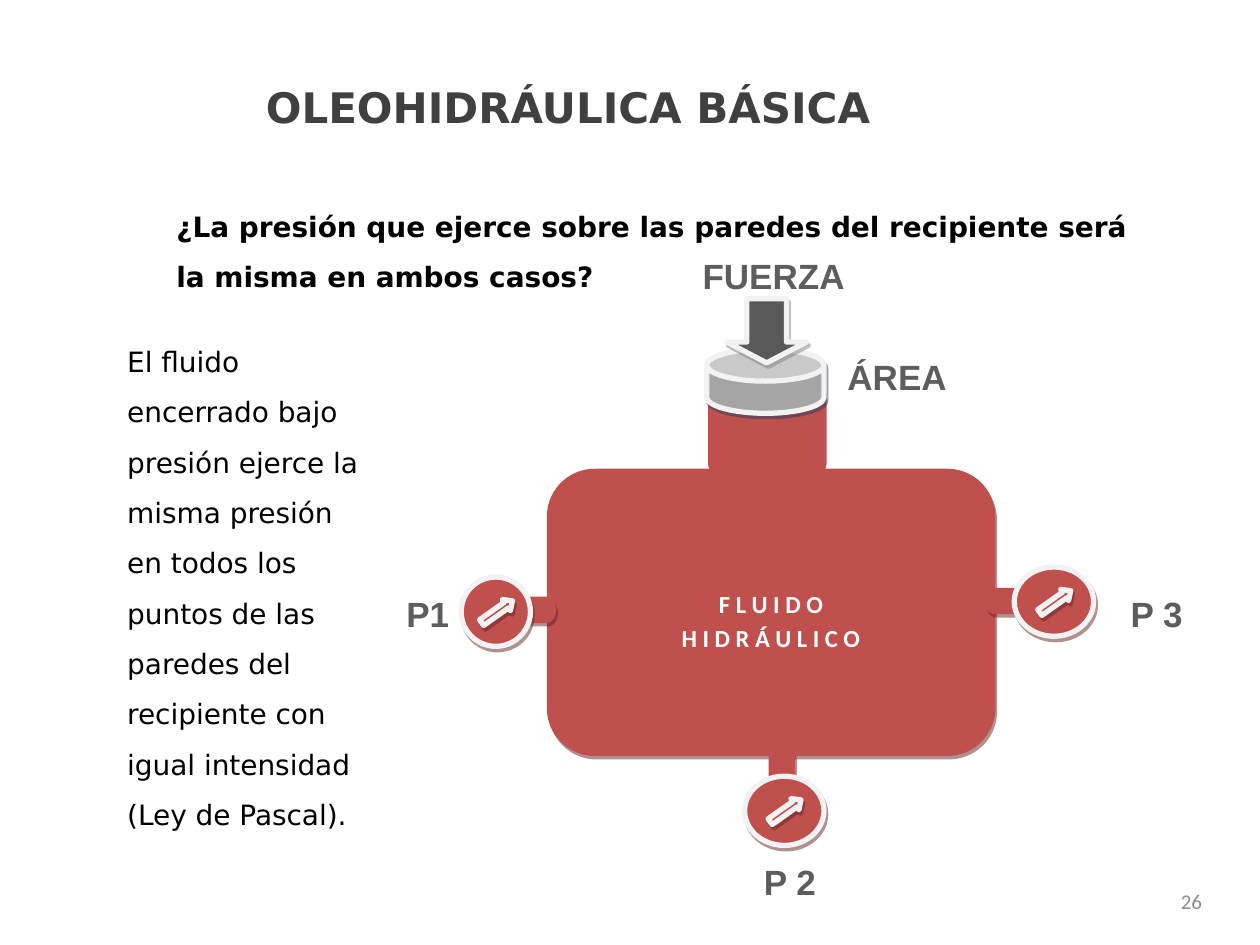
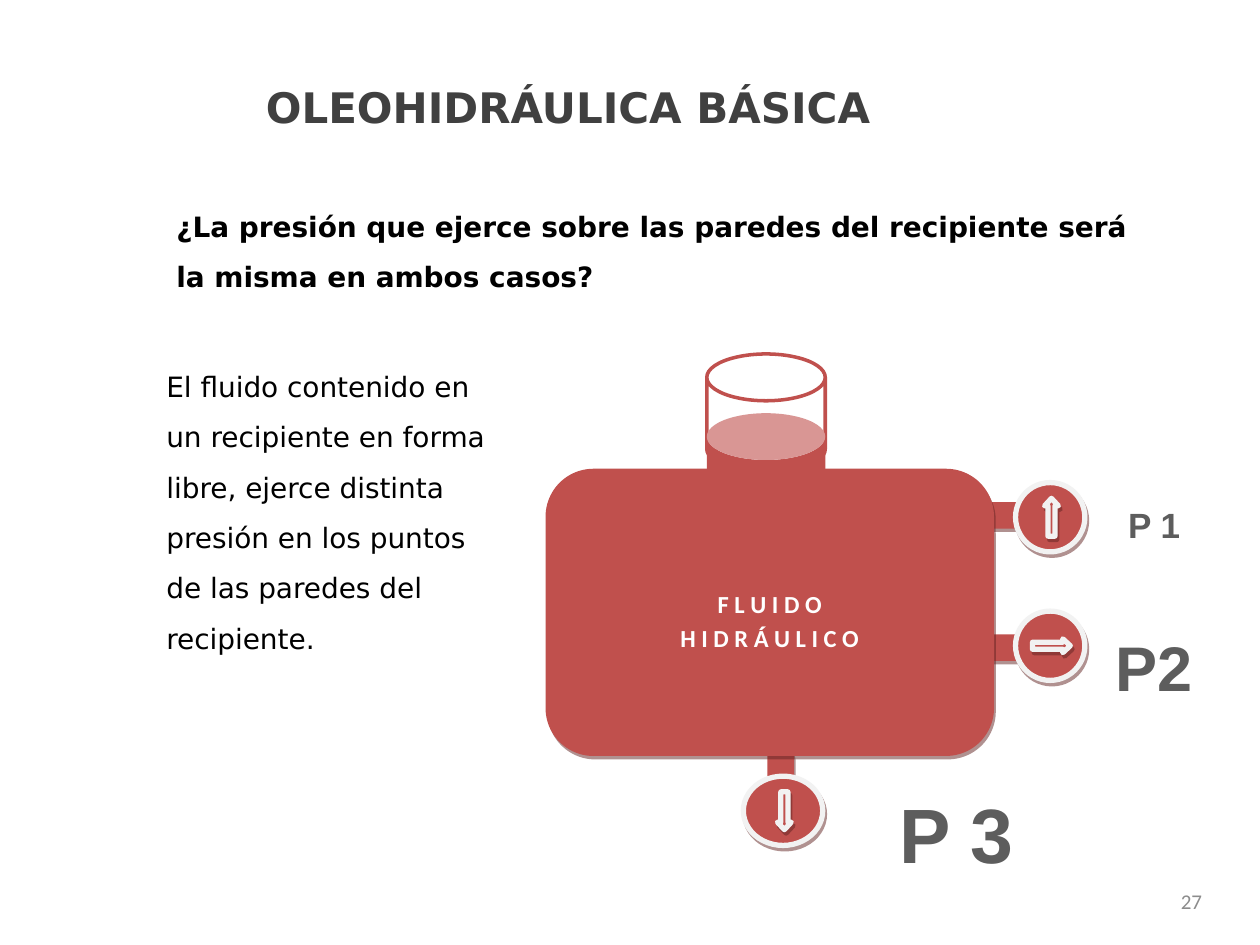
import pptx
import pptx.util
from lxml import etree
from pptx.dml.color import RGBColor
from pptx.enum.shapes import MSO_SHAPE
from pptx.enum.text import MSO_ANCHOR, MSO_AUTO_SIZE, PP_ALIGN
from pptx.oxml.ns import qn

RED = RGBColor(0xC0, 0x50, 0x4D)
DARK_RED = RGBColor(0x62, 0x24, 0x23)
WHITE = RGBColor(0xFF, 0xFF, 0xFF)
RIM = RGBColor(0xF2, 0xF2, 0xF2)
STEEL = RGBColor(0xA5, 0xA5, 0xA5)
STEEL_SHADE = RGBColor(0x24, 0x3F, 0x60)
ARROW_GREY = RGBColor(0x59, 0x59, 0x59)
ARROW_SHADE = RGBColor(0x7F, 0x7F, 0x7F)
LABEL_GREY = RGBColor(0x5D, 0x5D, 0x5D)
TITLE_GREY = RGBColor(0x40, 0x40, 0x40)
NUMBER_GREY = RGBColor(0x8C, 0x8C, 0x8C)
BLACK = RGBColor(0, 0, 0)

# The slide is a grid of 100 columns by 75 rows
WIDTH, HEIGHT = pptx.util.Inches(10), pptx.util.Inches(7.5)
COL, ROW = WIDTH / 100, HEIGHT / 75

TITLE_BOX = (20.1, 6, 60.6, 5)
QUESTION_BOX = (13, 14.8, 78.7, 8.5)
NUMBER_BOX = (73.1, 69.5, 23.3, 4)
TANK_SIZE = (35.6, 22.8)

TITLE = "OLEOHIDRÁULICA BÁSICA"
QUESTION = ("¿La presión que ejerce sobre las paredes del recipiente será "
            "la misma en ambos casos?")
CLOSED_TEXT = ("El fluido encerrado bajo presión ejerce la misma presión en todos los "
               "puntos de las paredes del recipiente con igual intensidad (Ley de Pascal).")
OPEN_TEXT = ("El fluido contenido en un recipiente en forma libre, ejerce distinta "
             "presión en los puntos de las paredes del recipiente.")


def emu(box):
    x, y, w, h = box
    return [pptx.util.Emu(round(v)) for v in (x * COL, y * ROW, w * COL, h * ROW)]


def centred(origin, cx, cy, w, h):
    """Box of the given size whose centre is offset from origin."""
    return origin[0] + cx - w / 2, origin[1] + cy - h / 2, w, h


def write(sp, text, size, font="DejaVu Sans", color=BLACK, bold=False,
          align=PP_ALIGN.LEFT, anchor=MSO_ANCHOR.TOP, spacing=None, wrap=True):
    tf = sp.text_frame
    tf.auto_size = MSO_AUTO_SIZE.NONE
    tf.word_wrap = wrap
    tf.vertical_anchor = anchor
    for i, line in enumerate(text.split("\n")):
        p = tf.paragraphs[0] if i == 0 else tf.add_paragraph()
        p.alignment = align
        p.space_before = pptx.util.Pt(0)
        if spacing:
            p.line_spacing = spacing
        r = p.add_run()
        r.text = line
        r.font.size = pptx.util.Pt(size)
        r.font.name = font
        r.font.bold = bold
        r.font.color.rgb = color


def fill_placeholder(sp, box, text, size, **fmt):
    sp.left, sp.top, sp.width, sp.height = emu(box)
    write(sp, text, size, **fmt)
    pPr = sp.text_frame.paragraphs[0]._p.get_or_add_pPr()
    pPr.set("marL", "0")
    pPr.set("indent", "0")
    etree.SubElement(pPr, qn("a:buNone"))


def add_text(s, box, text, size, **fmt):
    write(s.shapes.add_textbox(*emu(box)), text, size, **fmt)


def add_part(s, kind, box, fill=RED, line=None, weight=3, shade=None, adj=(), angle=0):
    sp = s.shapes.add_shape(kind, *emu(box))
    sp.shadow.inherit = False
    for i, value in enumerate(adj):
        sp.adjustments[i] = value
    sp.rotation = angle
    sp.fill.solid()
    sp.fill.fore_color.rgb = fill
    if line is None:
        sp.line.fill.background()
    else:
        sp.line.color.rgb = line
        sp.line.width = pptx.util.Pt(weight)
    if shade is not None:
        effects = sp._element.spPr.find(qn("a:effectLst"))
        outer = etree.SubElement(effects, qn("a:outerShdw"), blurRad="0", dist="28000",
                                 dir="3780000", algn="ctr", rotWithShape="0")
        clr = etree.SubElement(outer, qn("a:srgbClr"), val=str(shade))
        etree.SubElement(clr, qn("a:alpha"), val="50000")
    return sp


def add_label(s, origin, cx, cy, text, size=20):
    add_text(s, centred(origin, cx, cy, 13.4, size * 0.22), text, size, font="Arial",
             color=LABEL_GREY, bold=True, align=PP_ALIGN.CENTER,
             anchor=MSO_ANCHOR.MIDDLE, wrap=False)


def add_pipe(s, origin, cx, cy, angle, length=7):
    add_part(s, MSO_SHAPE.CAN, centred(origin, cx, cy, 2.1, length),
             shade=DARK_RED, adj=[0.775], angle=angle)


def add_gauge(s, origin, cx, cy, angle, width=5.5):
    add_part(s, MSO_SHAPE.OVAL, centred(origin, cx, cy, width, 5.5),
             line=RIM, shade=DARK_RED)
    add_part(s, MSO_SHAPE.RIGHT_ARROW, centred(origin, cx + 0.1, cy, 3, 1.1),
             line=RIM, shade=DARK_RED, adj=[0.51, 0.54], angle=angle)


def add_tank(s, origin):
    sp = add_part(s, MSO_SHAPE.ROUNDED_RECTANGLE, (*origin, *TANK_SIZE),
                  shade=DARK_RED, adj=[0.167])
    sp.text_frame.margin_top = pptx.util.Inches(0.15)
    write(sp, "F L U I D O\nH I D R Á U L I C O", 14, font="Calibri", color=WHITE,
          bold=True, align=PP_ALIGN.CENTER, anchor=MSO_ANCHOR.MIDDLE,
          spacing=pptx.util.Pt(19))


def add_neck(s, origin, top, fill=RED, line=None):
    x, y = origin
    add_part(s, MSO_SHAPE.CAN, (x + 12.8, y + top, 9.4, 9.4), fill=fill, line=line,
             weight=2, adj=[0.395])


def draw_closed_tank(s, origin):
    x, y = origin
    # Neck, piston and force
    add_neck(s, origin, -7.9)
    add_part(s, MSO_SHAPE.CAN, (x + 12.7, y - 9.5, 9.3, 5.1), fill=STEEL, line=RIM,
             shade=STEEL_SHADE, adj=[0.5])
    add_part(s, MSO_SHAPE.DOWN_ARROW, (x + 14.3, y - 13.5, 6.3, 5.1), fill=ARROW_GREY,
             line=RIM, shade=ARROW_SHADE, adj=[0.5, 0.323])
    add_tank(s, origin)
    # Pipes and gauges
    add_pipe(s, origin, 18.65, 24.35, 180, length=4.7)
    add_pipe(s, origin, -2.75, 11.2, 270)
    add_pipe(s, origin, 38.25, 10.5, 90)
    for cx, cy, width in ((18.85, 27.15, 6.3), (-4.05, 11.35, 5.5), (40.25, 10.55, 6.3)):
        add_gauge(s, origin, cx, cy, 324.7, width)
    for cx, cy, text in ((18, -15.3, "FUERZA"), (27.8, -7.3, "ÁREA"), (-9.45, 11.5, "P1"),
                         (19.3, 32.8, "P 2"), (48.4, 11.5, "P 3")):
        add_label(s, origin, cx, cy, text)


def draw_open_tank(s, origin):
    # Pipes run behind the tank
    add_pipe(s, origin, 36.85, 14.2, 90)
    add_pipe(s, origin, 36.85, 3.7, 90)
    add_pipe(s, origin, 18.65, 24.35, 180, length=4.7)
    # Open neck, tank and fluid level
    add_neck(s, origin, -9.1, fill=WHITE, line=RED)
    add_tank(s, origin)
    add_neck(s, origin, -4.4)
    # Gauges, with labels that grow with the depth
    add_gauge(s, origin, 40.05, 3.85, 270)
    add_gauge(s, origin, 40.05, 14.05, 0)
    add_gauge(s, origin, 18.85, 27.15, 90, width=6.3)
    for cx, cy, text, size in ((48.3, 4.4, "P 1", 20), (48.3, 15.65, "P2", 36),
                               (32.6, 28.9, "P 3", 44)):
        add_label(s, origin, cx, cy, text, size)


def add_pressure_slide(prs, number, text, text_box, draw_tank, origin):
    s = prs.slides.add_slide(prs.slide_layouts[3])
    title, answer, question = s.placeholders
    fill_placeholder(title, TITLE_BOX, TITLE, 24, color=TITLE_GREY, bold=True)
    fill_placeholder(answer, text_box, text, 16, spacing=1.5)
    fill_placeholder(question, QUESTION_BOX, QUESTION, 16, bold=True, spacing=1.5)
    draw_tank(s, origin)
    add_text(s, NUMBER_BOX, str(number), 12, font="Calibri", color=NUMBER_GREY,
             align=PP_ALIGN.RIGHT, anchor=MSO_ANCHOR.MIDDLE)


def main():
    prs = pptx.Presentation()
    prs.slide_width, prs.slide_height = WIDTH, HEIGHT
    add_pressure_slide(prs, 26, CLOSED_TEXT, (9.1, 25.5, 20.5, 45.4),
                       draw_closed_tank, (43.4, 37.2))
    add_pressure_slide(prs, 27, OPEN_TEXT, (12.2, 27.5, 29.1, 28.3),
                       draw_open_tank, (43.3, 37.2))
    prs.save("out.pptx")


if __name__ == "__main__":
    main()
